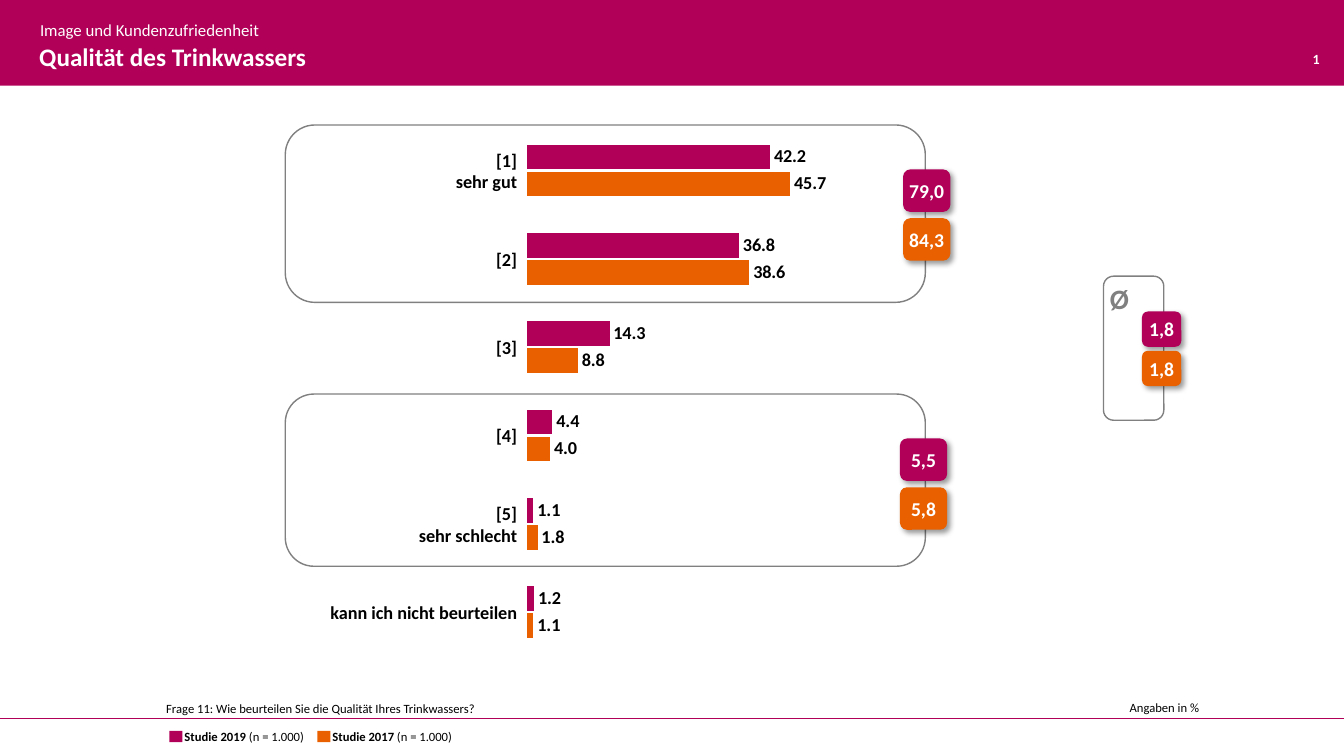
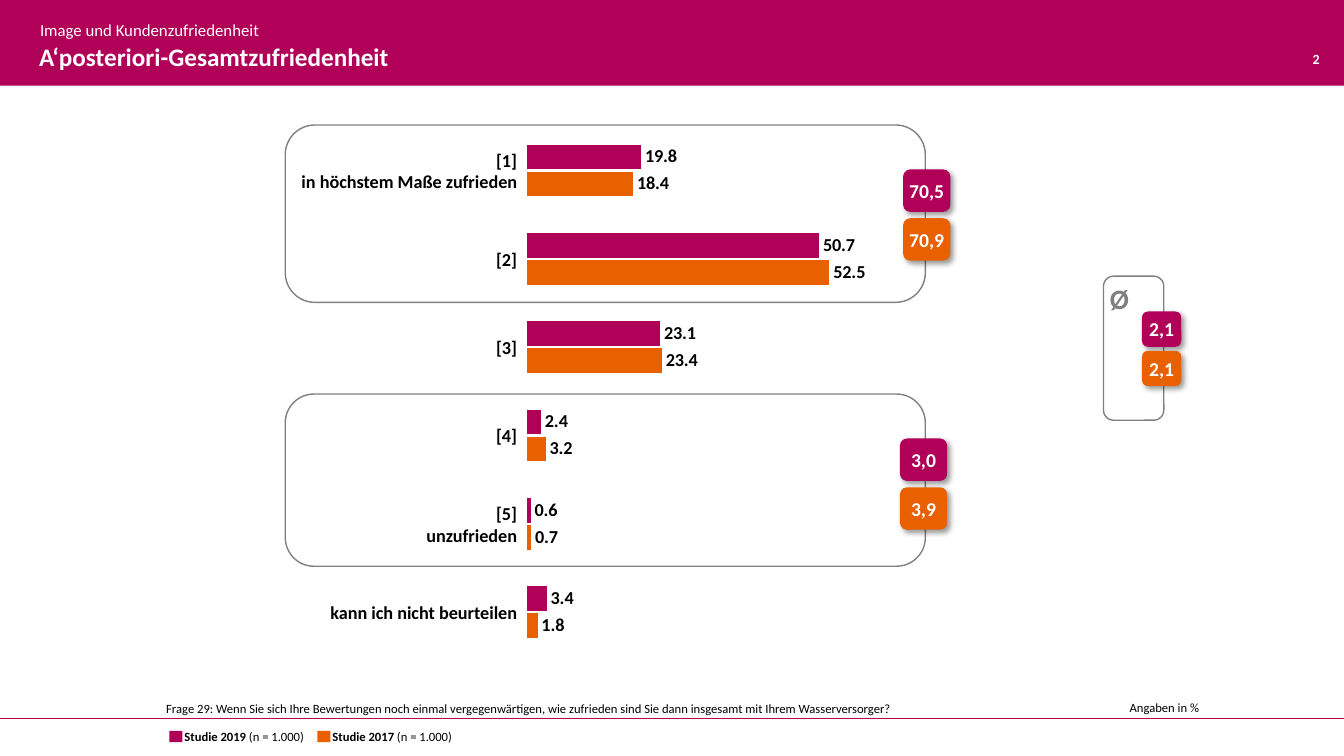
import pptx
import pptx.util
import pptx.chart.data
import pptx.dml.color
import pptx.enum.chart
import pptx.enum.shapes
import pptx.enum.text
import pptx.oxml
import pptx.oxml.ns

Cm, Pt = pptx.util.Cm, pptx.util.Pt
Align = pptx.enum.text.PP_ALIGN
Anchor = pptx.enum.text.MSO_ANCHOR
Kind = pptx.enum.shapes.MSO_SHAPE


class Theme:
    font = "Calibri"
    wine, orange = "B10058", "E86000"
    grey, black, white = "808080", "000000", "FFFFFF"
    title, head, page = 18, 12, 10
    label, badge, mean, note = 13, 14, 20, 9
    inset = (0.25, 0.13, 0.25, 0.13)
    series = (wine, orange)


WIDTH, HEIGHT = 33.87, 19.05
CHART = (3.38, 2.29, 24.64, 14.25)
PLOT = {"x": 0.402, "y": 0.063, "w": 0.589, "h": 0.937}
STUDIES = ("Studie 2019", "Studie 2017")

PAGES = [
    {
        "title": "Qualität des Trinkwassers",
        "query": "Frage 11: Wie beurteilen Sie die Qualität Ihres Trinkwassers?",
        "best": "sehr gut", "worst": "sehr schlecht",
        "values": [(42.2, 36.8, 14.3, 4.4, 1.1, 1.2),
                   (45.7, 38.6, 8.8, 4.0, 1.8, 1.1)],
        "top": ("79,0", "84,3"), "low": ("5,5", "5,8"), "mean": ("1,8", "1,8"),
    },
    {
        "title": "A‘posteriori-Gesamtzufriedenheit",
        "query": "Frage 29: Wenn Sie sich Ihre Bewertungen noch einmal "
                 "vergegenwärtigen, wie zufrieden sind Sie dann insgesamt "
                 "mit Ihrem Wasserversorger?",
        "best": "in höchstem Maße zufrieden", "worst": "unzufrieden",
        "values": [(19.8, 50.7, 23.1, 2.4, 0.6, 3.4),
                   (18.4, 52.5, 23.4, 3.2, 0.7, 1.8)],
        "top": ("70,5", "70,9"), "low": ("3,0", "3,9"), "mean": ("2,1", "2,1"),
    },
]


def tint(code):
    return pptx.dml.color.RGBColor.from_string(code)


def parse(xml):
    return pptx.oxml.parse_xml(xml)


class Deck:
    def __init__(self):
        self.file = pptx.Presentation()
        self.file.slide_width = Cm(WIDTH)
        self.file.slide_height = Cm(HEIGHT)
        self.slide = None

    def start(self):
        self.slide = self.file.slides.add_slide(self.file.slide_layouts[6])

    def style(self, font, size, color, bold=False):
        font.name, font.size, font.bold = Theme.font, Pt(size), bold
        font.color.rgb = tint(color)

    def fill_text(self, shape, text, size, color, bold=False, align=Align.LEFT,
                  anchor=Anchor.TOP, inset=Theme.inset, wrap=True):
        frame = shape.text_frame
        frame.margin_left, frame.margin_top, frame.margin_right, \
            frame.margin_bottom = map(Cm, inset)
        frame.word_wrap, frame.vertical_anchor = wrap, anchor
        frame.text = text
        for para in frame.paragraphs:
            para.alignment = align
            for run in para.runs:
                self.style(run.font, size, color, bold)
        return frame

    def text(self, box, text, size, color=Theme.black, **look):
        shape = self.slide.shapes.add_textbox(*map(Cm, box))
        return self.fill_text(shape, text, size, color, **look)

    def shape(self, kind, box, fill=None, line=None):
        shape = self.slide.shapes.add_shape(kind, *map(Cm, box))
        shape.shadow.inherit = False
        if fill:
            shape.fill.solid()
            shape.fill.fore_color.rgb = tint(fill)
        else:
            shape.fill.background()
        if line:
            shape.line.color.rgb = tint(line)
            shape.line.width = Pt(1)
        else:
            shape.line.fill.background()
        return shape

    def rule(self, y):
        line = self.slide.shapes.add_connector(
            pptx.enum.shapes.MSO_CONNECTOR.STRAIGHT, 0, Cm(y), Cm(WIDTH), Cm(y))
        line.line.color.rgb = tint(Theme.wine)
        line.line.width = Pt(1)
        space = pptx.oxml.ns.nsdecls("a")
        line._element.spPr.append(parse(f"<a:effectLst {space}/>"))

    def frame(self, box):
        return self.shape(Kind.ROUNDED_RECTANGLE, box, line=Theme.grey)

    def badges(self, texts, x, y, w, h, step):
        space = pptx.oxml.ns.nsdecls("a")
        for row, (text, color) in enumerate(zip(texts, Theme.series)):
            badge = self.shape(Kind.ROUNDED_RECTANGLE,
                               (x, y + row * step, w, h), color)
            effects = badge._element.spPr.find(pptx.oxml.ns.qn("a:effectLst"))
            effects.append(parse(
                f'<a:outerShdw {space} blurRad="{Pt(4)}" dist="{Pt(3)}" '
                'dir="2700000" algn="tl" rotWithShape="0">'
                f'<a:srgbClr val="{Theme.black}"><a:alpha val="40000"/>'
                "</a:srgbClr></a:outerShdw>"))
            self.fill_text(badge, text, Theme.badge, Theme.white, bold=True,
                           align=Align.CENTER, anchor=Anchor.MIDDLE,
                           inset=(0, 0, 0, 0))

    def header(self, title, page):
        self.shape(Kind.RECTANGLE, (0, 0, WIDTH, 2.16), Theme.wine)
        for box, text, size, bold in (
                ((0.74, 0.99, 31.7, 1.07), title, Theme.title, True),
                ((0.76, 0.43, 31.7, 1.07), "Image und Kundenzufriedenheit",
                 Theme.head, False)):
            frame = self.text(box, text, size, Theme.white, bold=bold)
            frame.paragraphs[0].line_spacing = 0.9
        self.text((32.46, 0.94, 1.42, 1.07), str(page), Theme.page, Theme.white,
                  bold=True, align=Align.CENTER, anchor=Anchor.MIDDLE, wrap=False)

    def footer(self, query):
        self.rule(18.11)
        self.text((3.94, 17.53, 19.6, 0.64), query, Theme.note,
                  anchor=Anchor.BOTTOM)
        self.text((28.22, 17.5, 2.29, 0.64), "Angaben in %", Theme.note,
                  wrap=False)
        for spot, (study, color) in enumerate(zip(STUDIES, Theme.series)):
            x = 4.27 + spot * 3.73
            self.shape(Kind.RECTANGLE, (x, 18.42, 0.33, 0.28), color)
            frame = self.text((x + 0.38, 18.36, 3.02, 0.38), study, Theme.note,
                              bold=True, inset=(0, 0, 0, 0), wrap=False)
            run = frame.paragraphs[0].add_run()
            run.text = " (n = 1.000)"
            self.style(run.font, Theme.note, Theme.black)

    def bars(self, names, values):
        enums = pptx.enum.chart
        data = pptx.chart.data.CategoryChartData(number_format="#,##0.0")
        data.categories = names
        for study, row in zip(STUDIES, values):
            data.add_series(study, row)
        chart = self.slide.shapes.add_chart(
            enums.XL_CHART_TYPE.BAR_CLUSTERED, *map(Cm, CHART), data).chart
        chart.has_legend = chart.has_title = False
        self.style(chart.font, Theme.label, Theme.black, True)

        # Bars and their values
        plot = chart.plots[0]
        plot.gap_width, plot.overlap = 148, -9
        plot.vary_by_categories = False
        for series, color in zip(plot.series, Theme.series):
            series.format.fill.solid()
            series.format.fill.fore_color.rgb = tint(color)
            labels = series.data_labels
            labels.show_value = True
            labels.number_format = "#,##0.0"
            labels.number_format_is_linked = False
            labels.position = enums.XL_LABEL_POSITION.OUTSIDE_END
            self.style(labels.font, Theme.label, Theme.black, True)

        # Bare axes
        for axis in (chart.category_axis, chart.value_axis):
            axis.has_major_gridlines = False
            axis.major_tick_mark = enums.XL_TICK_MARK.NONE
            axis.tick_label_position = enums.XL_TICK_LABEL_POSITION.NONE
            axis.format.line.fill.background()
        chart.category_axis.reverse_order = True
        chart.value_axis.minimum_scale = 0
        chart.value_axis.maximum_scale = 100

        # Fixed plot area
        area = chart._chartSpace.chart.plotArea
        for old in area.findall(pptx.oxml.ns.qn("c:layout")):
            area.remove(old)
        modes = '<c:xMode val="edge"/><c:yMode val="edge"/>'
        sizes = "".join(f'<c:{k} val="{v}"/>' for k, v in PLOT.items())
        space = pptx.oxml.ns.nsdecls("c")
        area.insert(0, parse(
            f'<c:layout {space}><c:manualLayout><c:layoutTarget val="inner"/>'
            f"{modes}{sizes}</c:manualLayout></c:layout>"))

        # Row names, flush right beside the bars
        pitch = PLOT["h"] * CHART[3] / len(names)
        top = CHART[1] + PLOT["y"] * CHART[3]
        for row, name in enumerate(names):
            self.text((7.4, top + row * pitch, 5.63, pitch), name, Theme.label,
                      bold=True, align=Align.RIGHT, anchor=Anchor.MIDDLE,
                      inset=(0, 0, 0, 0))

    def sums(self, top, low):
        for box, texts, x in (((7.19, 3.15, 16.13, 4.47), top, 22.76),
                              ((7.19, 9.93, 16.13, 4.34), low, 22.68)):
            self.frame(box)
            self.badges(texts, x, box[1] + 1.12, 1.19, 1.07, 1.23)

    def mean(self, texts):
        box = self.frame((27.81, 6.96, 1.52, 3.63))
        self.fill_text(box, "Ø", Theme.mean, Theme.grey, bold=True,
                       align=Align.CENTER, anchor=Anchor.MIDDLE,
                       inset=(0, 0, 0.71, 2.49))
        self.badges(texts, 28.78, 7.85, 0.99, 0.89, 0.99)


def main():
    deck = Deck()
    for number, page in enumerate(PAGES, 1):
        names = ["[1]\n" + page["best"], "[2]", "[3]", "[4]",
                 "[5]\n" + page["worst"], "kann ich nicht beurteilen"]
        deck.start()
        deck.header(page["title"], number)
        deck.bars(names, page["values"])
        deck.footer(page["query"])
        deck.sums(page["top"], page["low"])
        deck.mean(page["mean"])
    deck.file.save("out.pptx")


if __name__ == "__main__":
    main()
